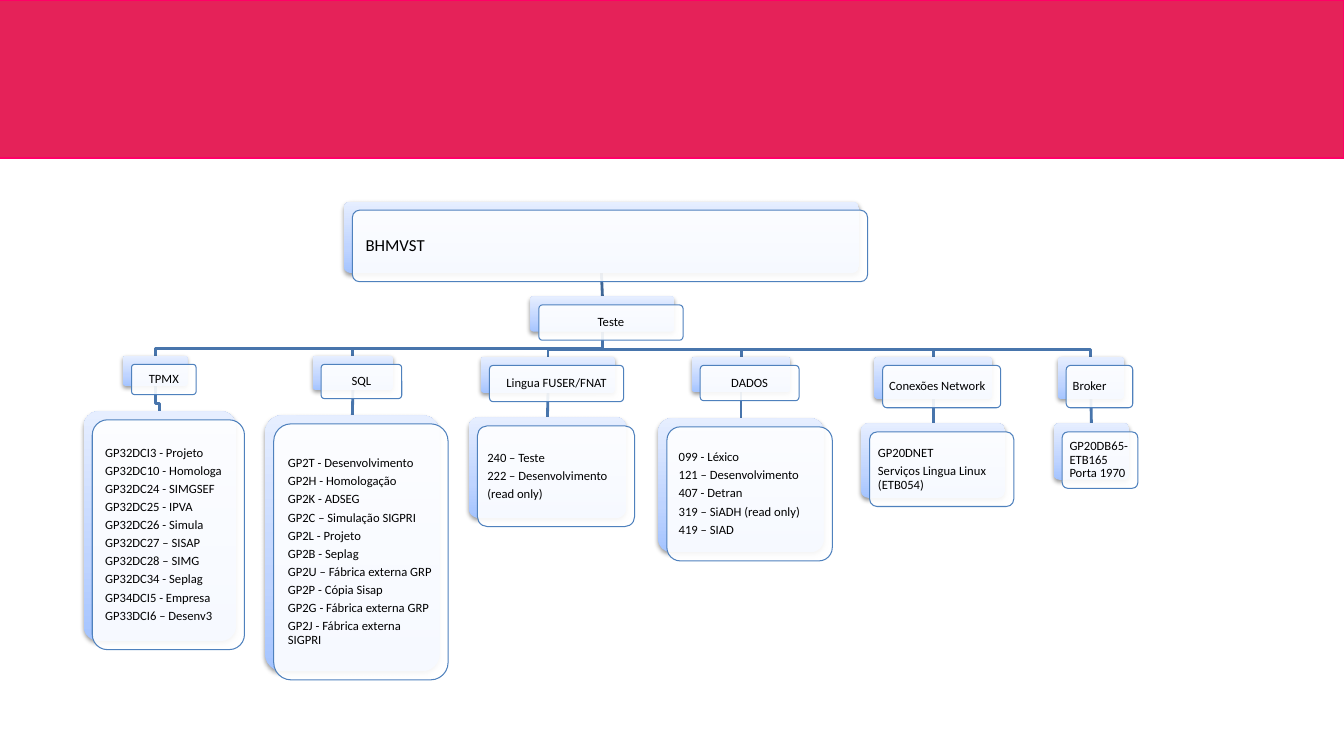
from copy import deepcopy
from lxml.etree import SubElement
from pptx import Presentation
from pptx.dml.color import RGBColor
from pptx.enum.shapes import MSO_CONNECTOR, MSO_SHAPE
from pptx.enum.text import MSO_ANCHOR, PP_ALIGN
from pptx.oxml.ns import qn
from pptx.util import Inches, Pt

HEX = {"band": "E52259", "rim": "FF0066", "deep": "A4C4FF", "mid": "BFD4FF",
       "pale": "E6EEFF", "face": "FFFFFF", "edge": "4F81BD", "text": "000000",
       "stem": "3F6797", "link": "4875AC"}
RGB = {name: RGBColor.from_string(code) for name, code in HEX.items()}
LEFT, MID = PP_ALIGN.LEFT, PP_ALIGN.CENTER

deck = Presentation()
deck.slide_width, deck.slide_height = Inches(13.33), Inches(7.5)
slide = deck.slides.add_slide(deck.slide_layouts[6])
shapes = slide.shapes
tree = shapes._spTree


def card(x, y, w, h, lines, align=LEFT, size=9, pad=0.04):
    back, front = [
        shapes.add_shape(MSO_SHAPE.ROUNDED_RECTANGLE, Inches(x + step),
                         Inches(y + step), Inches(w), Inches(h))
        for step in (0, 0.085)]
    for plate in (back, front):
        plate.adjustments[0] = 0.1
        plate.shadow.inherit = False

    back.line.fill.background()
    back.fill.gradient()
    back.fill.gradient_angle = 90
    stops = back.fill.gradient_stops
    stops[0].color.rgb, stops[1].color.rgb = RGB["deep"], RGB["pale"]
    first = back._element.spPr.find(".//" + qn("a:gs"))
    extra = deepcopy(first)
    extra.set("pos", "35000")
    extra[0].set("val", HEX["mid"])
    first.addnext(extra)
    glow = SubElement(back._element.spPr.find(qn("a:effectLst")), qn("a:outerShdw"),
                      blurRad="40000", dist="20000", dir="5400000", rotWithShape="0")
    tint = SubElement(glow, qn("a:srgbClr"), val=HEX["text"])
    SubElement(tint, qn("a:alpha"), val="38000")

    front.fill.solid()
    front.fill.fore_color.rgb = RGB["face"]
    tint = front._element.spPr.find(qn("a:solidFill"))[0]
    SubElement(tint, qn("a:alpha"), val="90000")
    front.line.color.rgb = RGB["edge"]
    front.line.width = Pt(0.75)

    frame = front.text_frame
    frame.word_wrap = True
    frame.vertical_anchor = MSO_ANCHOR.MIDDLE
    inset = Inches(pad + 0.029 * min(w, h))
    frame.margin_left = frame.margin_right = inset
    frame.margin_top = frame.margin_bottom = inset
    for i, line in enumerate(lines):
        para = frame.add_paragraph() if i else frame.paragraphs[0]
        para.alignment = align
        para.line_spacing = 0.9
        para.space_after = Pt(size * 0.35)
        run = para.add_run()
        run.text = line
        run.font.name = "Calibri"
        run.font.size = Pt(size)
        run.font.color.rgb = RGB["text"]
    return back


def link(top, low, color="link"):
    x1, x2 = [box.left + box.width // 2 for box in (top, low)]
    y1, y2 = top.top + top.height, low.top
    if abs(x1 - x2) < Inches(0.02):
        line = shapes.add_connector(MSO_CONNECTOR.STRAIGHT, x1, y1, x2, y2)
        line.begin_connect(top, 2)
        line.end_connect(low, 0)
        SubElement(line._element.spPr, qn("a:effectLst"))
    else:
        bend = y1 + int((y2 - y1) * 0.7)
        path = shapes.build_freeform(x1, y1)
        path.add_line_segments([(x1, bend), (x2, bend), (x2, y2)], close=False)
        line = path.convert_to_shape()
        line.fill.background()
        line.shadow.inherit = False
    line.line.color.rgb = RGB[color]
    line.line.width = Pt(2)
    tree.insert(2, line._element)


band = shapes.add_shape(MSO_SHAPE.RECTANGLE, Inches(-0.01), 0, Inches(13.34), Inches(1.57))
band.fill.solid()
band.fill.fore_color.rgb = RGB["band"]
band.line.color.rgb = RGB["rim"]
band.line.width = Pt(1)
band.shadow.inherit = False

root = card(3.41, 2, 5.11, 0.71, ["BHMVST"], size=12, pad=0.09)
test = card(5.26, 2.94, 1.43, 0.35, ["Teste"], MID)
link(root, test, "stem")

groups = [
    ("TPMX", MID, (1.22, 3.53, 0.64, 0.3), (0.83, 4.08, 1.51, 2.28),
     ["GP32DCI3 - Projeto", "GP32DC10 - Homologa", "GP32DC24 - SIMGSEF",
      "GP32DC25 - IPVA", "GP32DC26 - Simula", "GP32DC27 – SISAP",
      "GP32DC28 – SIMG", "GP32DC34 - Seplag", "GP34DCI5 - Empresa",
      "GP33DCI6 – Desenv3"]),
    ("SQL", MID, (3.1, 3.53, 0.8, 0.34), (2.63, 4.12, 1.73, 2.54),
     ["GP2T - Desenvolvimento", "GP2H - Homologação", "GP2K - ADSEG",
      "GP2C – Simulação SIGPRI", "GP2L - Projeto", "GP2B - Seplag",
      "GP2U – Fábrica externa GRP", "GP2P - Cópia Sisap",
      "GP2G - Fábrica externa GRP", "GP2J - Fábrica externa SIGPRI"]),
    ("Lingua FUSER/FNAT", MID, (4.77, 3.54, 1.33, 0.36), (4.65, 4.14, 1.56, 1),
     ["240 – Teste", "222 – Desenvolvimento", "(read only)"]),
    ("DADOS", MID, (6.86, 3.54, 0.98, 0.35), (6.53, 4.15, 1.64, 1.33),
     ["099 - Léxico", "121 – Desenvolvimento", "407 - Detran",
      "319 – SiADH (read only)", "419 – SIAD"]),
    ("Conexões Network", LEFT, (8.67, 3.54, 1.17, 0.42), (8.54, 4.2, 1.43, 0.74),
     ["GP20DNET", "Serviços Lingua Linux (ETB054)"]),
    ("Broker", LEFT, (10.49, 3.54, 0.66, 0.42), (10.45, 4.2, 0.75, 0.56),
     ["GP20DB65- ETB165 Porta 1970"]),
]
for name, align, head, body, lines in groups:
    label = card(*head, [name], align)
    items = card(*body, lines)
    link(test, label)
    link(label, items)

deck.save("out.pptx")
